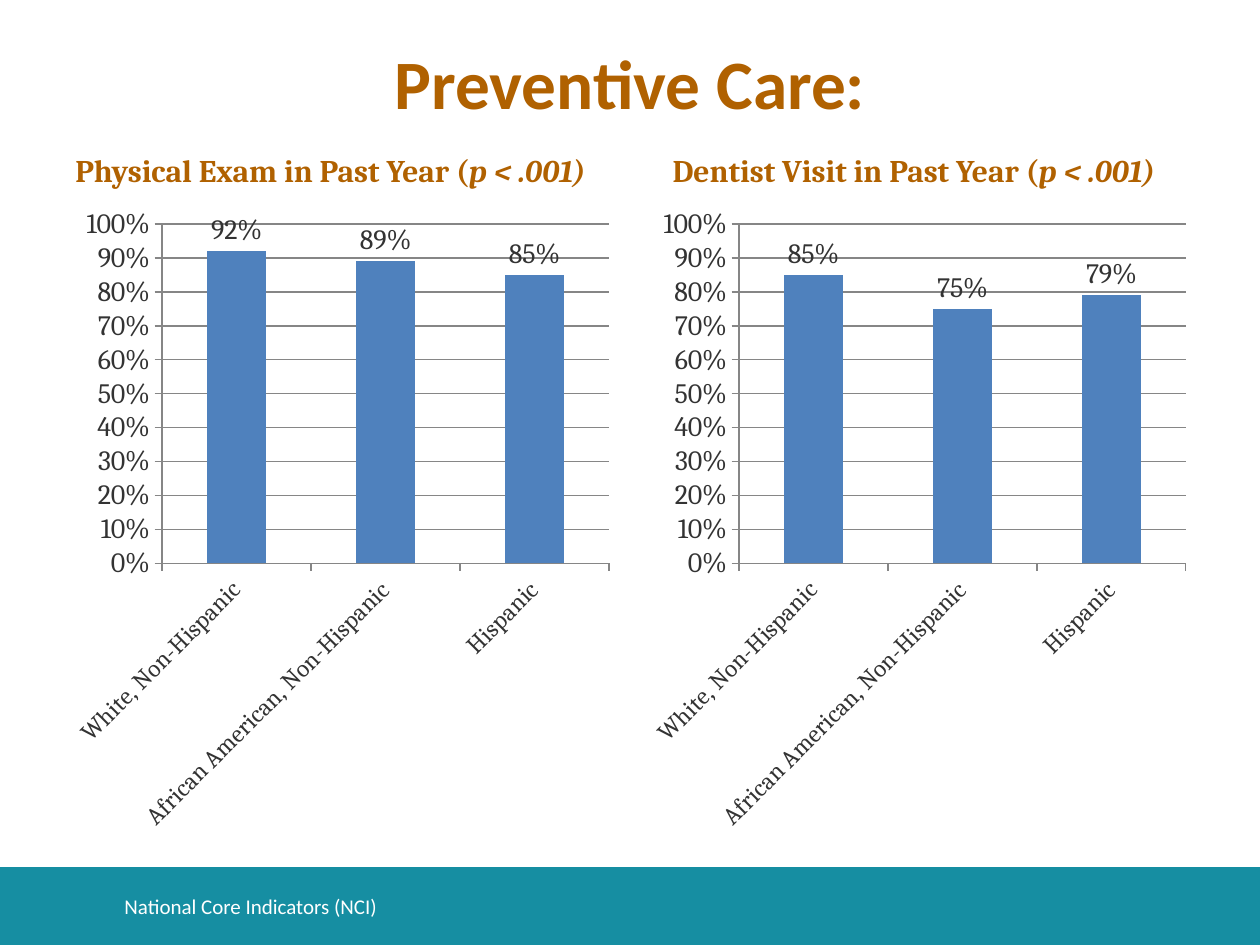
from pptx import Presentation
from pptx.chart.data import CategoryChartData
from pptx.dml.color import RGBColor
from pptx.enum.chart import XL_CHART_TYPE as ChartType, XL_LABEL_POSITION as LabelPos
from pptx.enum.chart import XL_TICK_MARK as Tick
from pptx.enum.shapes import MSO_SHAPE as Shape
from pptx.enum.text import MSO_ANCHOR as Anchor, PP_ALIGN as Align
from pptx.util import Cm, Pt

BROWN = RGBColor(0xB0, 0x61, 0x00)
TEAL = RGBColor(0x16, 0x8E, 0xA2)
WHITE = RGBColor(0xFF, 0xFF, 0xFF)
BLUE = RGBColor(0x4F, 0x81, 0xBD)
DARK = RGBColor(0x33, 0x33, 0x33)
GRAY = RGBColor(0x86, 0x86, 0x86)

# Content
TITLE = "Preventive Care:"
FOOTER = "National Core Indicators (NCI)"
GROUPS = ["White, Non-Hispanic", "African American, Non-Hispanic", "Hispanic"]
SIGNIFICANCE = "p < .001)"
# heading, heading left, chart left, values
PANELS = [
    ("Physical Exam in Past Year (", 1.27, 1.27, (0.92, 0.89, 0.85)),
    ("Dentist Visit in Past Year (", 13.31, 12.9, (0.85, 0.75, 0.79)),
]
PANEL_W = 11.23

# Text formats
TITLE_FONT = dict(name="Calibri", size=Pt(39.6), bold=True)
HEADING_FONT = dict(name="Cambria", size=Pt(18), bold=True)
FOOTER_FONT = dict(name="Calibri", size=Pt(12))


def set_font(font, color, **values):
    for key, value in values.items():
        setattr(font, key, value)
    font.color.rgb = color


def add_text(s, box, runs, fmt, color, anchor=Anchor.MIDDLE, align=Align.LEFT):
    tf = s.shapes.add_textbox(*map(Cm, box)).text_frame
    tf.word_wrap = True
    tf.vertical_anchor = anchor
    p = tf.paragraphs[0]
    p.alignment = align
    for text, extra in runs:
        r = p.add_run()
        r.text = text
        set_font(r.font, color, **fmt, **extra)


def add_column_chart(s, left, values):
    data = CategoryChartData(number_format="0%")
    data.categories = GROUPS
    data.add_series("Series 1", values)
    box = map(Cm, (left, 3.94, PANEL_W, 13.08))
    chart = s.shapes.add_chart(ChartType.COLUMN_CLUSTERED, *box, data).chart
    chart.has_legend = chart.has_title = False
    set_font(chart.font, DARK, name="Cambria", size=Pt(10))

    # Axes
    cat_axis, val_axis = chart.category_axis, chart.value_axis
    for axis, size in ((cat_axis, 14), (val_axis, 16)):
        axis.major_tick_mark = Tick.OUTSIDE
        axis.minor_tick_mark = Tick.NONE
        axis.format.line.color.rgb = GRAY
        set_font(axis.tick_labels.font, DARK, name="Cambria", size=Pt(size))
    cat_axis._element.txPr.bodyPr.set("rot", "-2700000")
    val_axis.minimum_scale, val_axis.maximum_scale = 0, 1
    val_axis.major_unit = 0.1
    val_axis.major_gridlines.format.line.color.rgb = GRAY
    val_axis.tick_labels.number_format = "0%"
    val_axis.tick_labels.number_format_is_linked = False

    # Columns and value labels
    plot = chart.plots[0]
    plot.gap_width = 150
    plot.vary_by_categories = False
    series = plot.series[0]
    series.format.fill.solid()
    series.format.fill.fore_color.rgb = BLUE
    labels = series.data_labels
    labels.show_value = True
    labels.number_format = "0%"
    labels.number_format_is_linked = False
    labels.position = LabelPos.OUTSIDE_END
    set_font(labels.font, DARK, name="Cambria", size=Pt(16))


def main():
    prs = Presentation()
    prs.slide_width, prs.slide_height = Cm(25.4), Cm(19.05)
    s = prs.slides.add_slide(prs.slide_layouts[6])

    # Footer band
    band = s.shapes.add_shape(Shape.RECTANGLE, *map(Cm, (0, 17.48, 25.4, 1.57)))
    band.shadow.inherit = False
    band.fill.solid()
    band.fill.fore_color.rgb = TEAL
    band.line.fill.background()
    add_text(s, (2.26, 17.75, 18.8, 1.02), [(FOOTER, {})], FOOTER_FONT, WHITE)

    # Title
    add_text(s, (1.27, 0.74, 22.86, 1.8), [(TITLE, {})], TITLE_FONT, BROWN,
             align=Align.CENTER)

    # Headings with their charts
    for heading, text_left, chart_left, values in PANELS:
        runs = [(heading, {}), (SIGNIFICANCE, {"italic": True})]
        add_text(s, (text_left, 2.16, PANEL_W, 1.78), runs, HEADING_FONT, BROWN,
                 anchor=Anchor.BOTTOM)
        add_column_chart(s, chart_left, values)

    prs.save("out.pptx")


if __name__ == "__main__":
    main()
